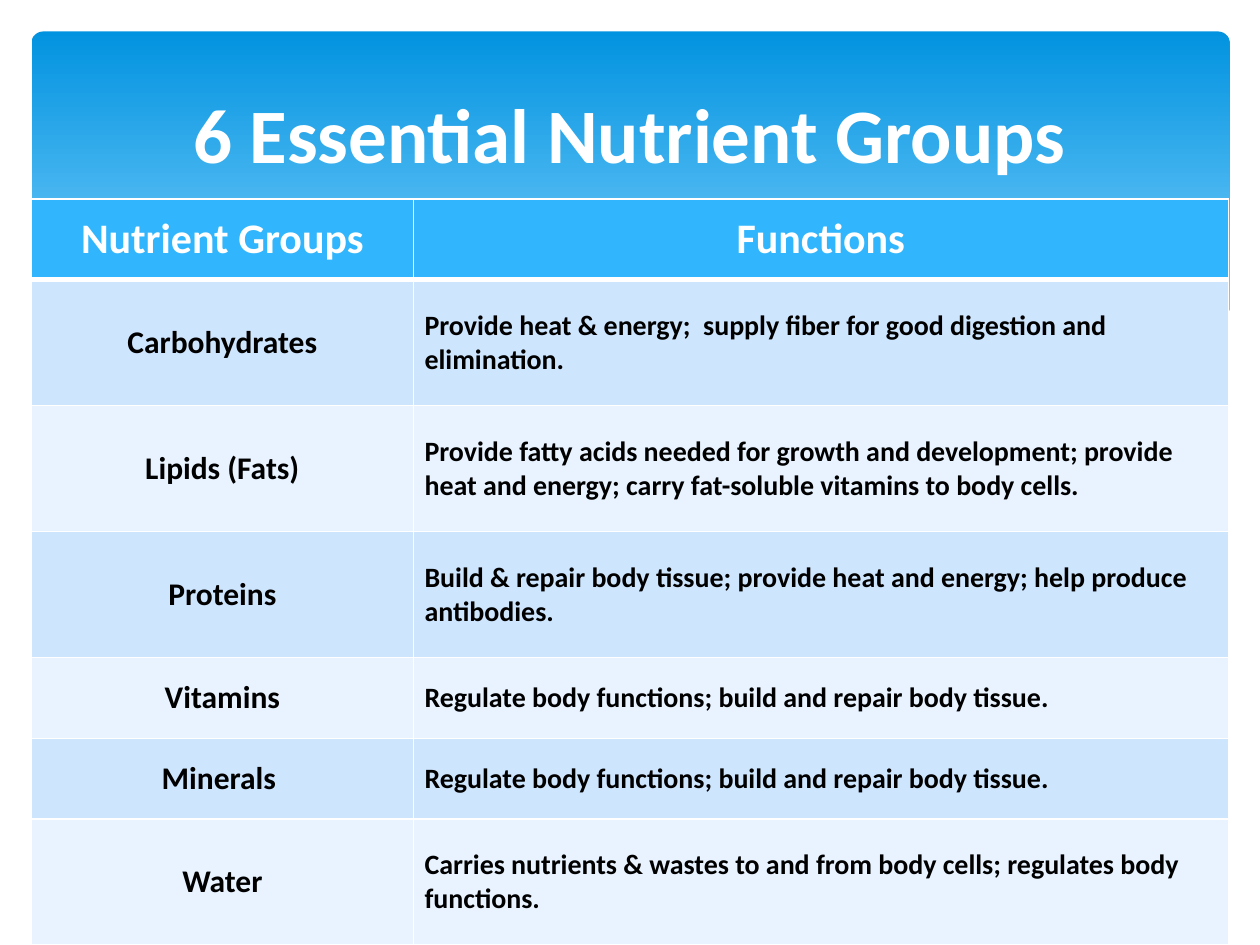
from typing import NamedTuple

import pptx
import pptx.dml.color
import pptx.enum.shapes
import pptx.enum.text
import pptx.oxml
import pptx.oxml.ns
import pptx.util

Inches = pptx.util.Inches
Pt = pptx.util.Pt
RGBColor = pptx.dml.color.RGBColor
Align = pptx.enum.text.PP_ALIGN
Anchor = pptx.enum.text.MSO_ANCHOR

FONT = "Calibri"
WHITE = RGBColor(0xFF, 0xFF, 0xFF)
BLACK = RGBColor(0x00, 0x00, 0x00)
BANNER_TOP = RGBColor(0x02, 0x93, 0xE0)
BANNER_BOTTOM = RGBColor(0x83, 0xD3, 0xFE)
HEADER_BLUE = RGBColor(0x31, 0xB6, 0xFD)
BANDS = (RGBColor(0xCE, 0xE5, 0xFE), RGBColor(0xE8, 0xF3, 0xFF))

COLUMN_WIDTHS = (3.03, 6.47)
SHORT_ROW = 0.64
TALL_ROW = 1.0
WAVE = (
    (9.77, 2.46), (9.2, 2.65), (8.23, 2.77), (7.08, 2.7), (5.79, 2.5),
    (4.47, 2.2), (3.16, 1.94), (1.93, 1.84), (0.85, 1.93), (0.23, 2.13),
    (0.23, 3.29), (9.77, 3.29),
)


class Nutrient(NamedTuple):
    group: str
    functions: str
    height: float


class TextStyle(NamedTuple):
    size: int
    color: RGBColor
    align: Align


TITLE_STYLE = TextStyle(44, WHITE, Align.CENTER)
HEADER_STYLE = TextStyle(24, WHITE, Align.CENTER)
GROUP_STYLE = TextStyle(18, BLACK, Align.CENTER)
FUNCTION_STYLE = TextStyle(16, BLACK, Align.LEFT)

NUTRIENTS = (
    Nutrient("Carbohydrates", "Provide heat & energy;  supply fiber for good digestion and elimination.", TALL_ROW),
    Nutrient(
        "Lipids (Fats)",
        "Provide fatty acids needed for growth and development; provide heat and energy; "
        "carry fat-soluble vitamins to body cells.",
        TALL_ROW,
    ),
    Nutrient(
        "Proteins",
        "Build & repair body tissue; provide heat and energy; help produce antibodies.",
        TALL_ROW,
    ),
    Nutrient("Vitamins", "Regulate body functions; build and repair body tissue.", SHORT_ROW),
    Nutrient("Minerals ", "Regulate body functions; build and repair body tissue.", SHORT_ROW),
    Nutrient(
        "Water",
        "Carries nutrients & wastes to and from body cells; regulates body functions.",
        TALL_ROW,
    ),
)


def write_text(frame, text: str, style: TextStyle) -> None:
    frame.word_wrap = True
    paragraph = frame.paragraphs[0]
    paragraph.alignment = style.align
    run = paragraph.add_run()
    run.text = text
    run.font.name = FONT
    run.font.size = Pt(style.size)
    run.font.bold = True
    run.font.color.rgb = style.color


def add_banner(slide) -> None:
    banner = slide.shapes.add_shape(
        pptx.enum.shapes.MSO_SHAPE.ROUNDED_RECTANGLE,
        Inches(0.25), Inches(0.25), Inches(9.51), Inches(2.7),
    )
    banner.adjustments[0] = 0.034
    banner.shadow.inherit = False
    banner.line.fill.background()
    banner.fill.gradient()
    banner.fill.gradient_angle = 270
    stops = banner.fill.gradient_stops
    for stop, position, color in zip(stops, (0, 0.9), (BANNER_TOP, BANNER_BOTTOM)):
        stop.position = position
        stop.color.rgb = color


def add_wave(slide) -> None:
    points = [(Inches(x), Inches(y)) for x, y in WAVE]
    builder = slide.shapes.build_freeform(*points[0])
    builder.add_line_segments(points[1:], close=True)
    wave = builder.convert_to_shape()
    wave.shadow.inherit = False
    wave.fill.solid()
    wave.fill.fore_color.rgb = WHITE
    wave.line.fill.background()


def add_title(slide) -> None:
    title = slide.shapes.add_textbox(Inches(0.5), Inches(0.37), Inches(9), Inches(1.37))
    title.text_frame.vertical_anchor = Anchor.MIDDLE
    write_text(title.text_frame, "6 Essential Nutrient Groups", TITLE_STYLE)


def set_borders(cell, top: int, bottom: int) -> None:
    properties = cell._tc.get_or_add_tcPr()
    for side, width in (("L", 1), ("R", 1), ("T", top), ("B", bottom)):
        properties.append(pptx.oxml.parse_xml(
            f'<a:ln{side} {pptx.oxml.ns.nsdecls("a")} w="{Pt(width)}">'
            f'<a:solidFill><a:srgbClr val="{WHITE}"/></a:solidFill></a:ln{side}>'
        ))


def fill_cell(cell, text: str, style: TextStyle, color: RGBColor, top: int, bottom: int) -> None:
    set_borders(cell, top, bottom)
    cell.fill.solid()
    cell.fill.fore_color.rgb = color
    cell.vertical_anchor = Anchor.MIDDLE
    cell.margin_left = cell.margin_right = Inches(0.09)
    cell.margin_top = cell.margin_bottom = Inches(0.05)
    write_text(cell.text_frame, text, style)


def add_nutrient_table(slide) -> None:
    heights = [SHORT_ROW] + [nutrient.height for nutrient in NUTRIENTS]
    table = slide.shapes.add_table(
        len(heights), len(COLUMN_WIDTHS),
        Inches(0.25), Inches(1.58), Inches(sum(COLUMN_WIDTHS)), Inches(sum(heights)),
    ).table
    for column, width in zip(table.columns, COLUMN_WIDTHS):
        column.width = Inches(width)
    for row, height in zip(table.rows, heights):
        row.height = Inches(height)
    for column, heading in enumerate(("Nutrient Groups", "Functions")):
        fill_cell(table.cell(0, column), heading, HEADER_STYLE, HEADER_BLUE, 1, 3)
    for index, nutrient in enumerate(NUTRIENTS):
        color = BANDS[index % 2]
        top = 3 if index == 0 else 1
        fill_cell(table.cell(index + 1, 0), nutrient.group, GROUP_STYLE, color, top, 1)
        fill_cell(table.cell(index + 1, 1), nutrient.functions, FUNCTION_STYLE, color, top, 1)


def main() -> None:
    presentation = pptx.Presentation()
    presentation.slide_width = Inches(10)
    presentation.slide_height = Inches(7.5)
    slide = presentation.slides.add_slide(presentation.slide_layouts[6])
    add_banner(slide)
    add_wave(slide)
    add_title(slide)
    add_nutrient_table(slide)
    presentation.save("out.pptx")


if __name__ == "__main__":
    main()
